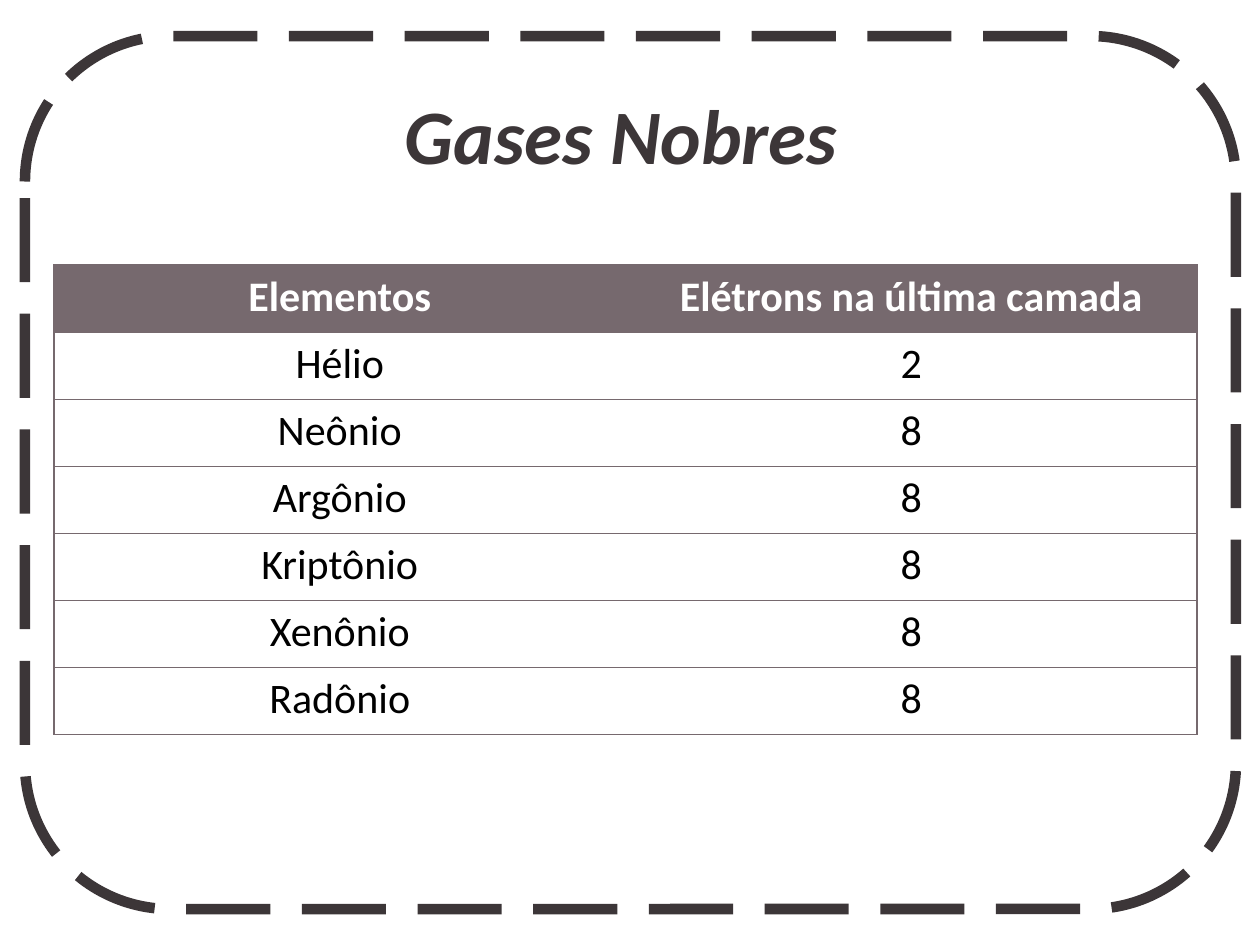
from lxml import etree
from pptx import Presentation
from pptx.dml.color import RGBColor
from pptx.enum.dml import MSO_LINE
from pptx.enum.shapes import MSO_SHAPE
from pptx.enum.text import MSO_ANCHOR, PP_ALIGN
from pptx.oxml.ns import qn
from pptx.util import Pt

SCALE = 914400 / 126
FONT = "Calibri"
CENTER = PP_ALIGN.CENTER
MIDDLE = MSO_ANCHOR.MIDDLE
ROUNDED = MSO_SHAPE.ROUNDED_RECTANGLE
LONG_DASH = MSO_LINE.LONG_DASH
TITLE_ONLY = 5
COLORS = {
    "dark": "3C3638",
    "mauve": "76696E",
    "white": "FFFFFF",
    "black": "000000",
}
HEADER = ("Elementos", "Elétrons na última camada")
GASES = (
    ("Hélio", "2"),
    ("Neônio", "8"),
    ("Argônio", "8"),
    ("Kriptônio", "8"),
    ("Xenônio", "8"),
    ("Radônio", "8"),
)


def px(length):
    """Turn a length in px into EMU."""
    return round(length * SCALE)


def color(name):
    """Look up a named colour."""
    return RGBColor.from_string(COLORS[name])


def style_paragraph(para, size, color_name, bold=False, italic=False):
    """Centre a paragraph and set its font."""
    para.alignment = CENTER
    font = para.font
    font.name, font.size = FONT, Pt(size)
    font.bold, font.italic = bold, italic
    font.color.rgb = color(color_name)


def set_borders(cell, visible):
    """Draw the visible sides of a cell and clear the others."""
    properties = cell._tc.get_or_add_tcPr()
    for side in "LRTB":
        line = etree.SubElement(properties, qn(f"a:ln{side}"), w=str(Pt(0.75)))
        if side in visible:
            fill = etree.SubElement(line, qn("a:solidFill"))
            etree.SubElement(fill, qn("a:srgbClr"), val=COLORS["mauve"])
        else:
            etree.SubElement(line, qn("a:noFill"))


def add_title(page, box, text):
    """Place the slide title in its box."""
    title = page.shapes.title
    title.left, title.top, title.width, title.height = map(px, box)
    frame = title.text_frame
    frame.text = text
    frame.vertical_anchor = MIDDLE
    style_paragraph(frame.paragraphs[0], 44, "dark", bold=True, italic=True)


def add_gas_table(page, box, rows):
    """Fill the box with an evenly divided table whose first row is a header."""
    columns = len(rows[0])
    shape = page.shapes.add_table(len(rows), columns, *map(px, box))
    table = shape.table
    table.horz_banding = False
    for column in table.columns:
        column.width = px(box[2] / columns)
    for row_index, values in enumerate(rows):
        table.rows[row_index].height = px(box[3] / len(rows))
        is_header = row_index == 0
        for column_index, value in enumerate(values):
            cell = table.cell(row_index, column_index)
            outer_side = "L" if column_index == 0 else "R"
            set_borders(cell, "TB" + outer_side)
            if is_header:
                cell.fill.solid()
                cell.fill.fore_color.rgb = color("mauve")
            else:
                cell.fill.background()
            cell.text = value
            text_color = "white" if is_header else "black"
            style_paragraph(cell.text_frame.paragraphs[0], 24, text_color, bold=is_header)


def add_dashed_frame(page, box):
    """Outline the box with a rounded dashed border."""
    border = page.shapes.add_shape(ROUNDED, *map(px, box))
    border.shadow.inherit = False
    border.fill.background()
    border.line.color.rgb = color("dark")
    border.line.width = Pt(6)
    border.line.dash_style = LONG_DASH


def main():
    """Build and save the deck."""
    deck = Presentation()
    deck.slide_width, deck.slide_height = px(1260), px(945)
    page = deck.slides.add_slide(deck.slide_layouts[TITLE_ONLY])
    add_title(page, (54, 55, 1134, 158), "Gases Nobres")
    add_gas_table(page, (54, 265, 1143, 470), (HEADER, *GASES))
    add_dashed_frame(page, (25, 36, 1211, 873))
    deck.save("out.pptx")


if __name__ == "__main__":
    main()
